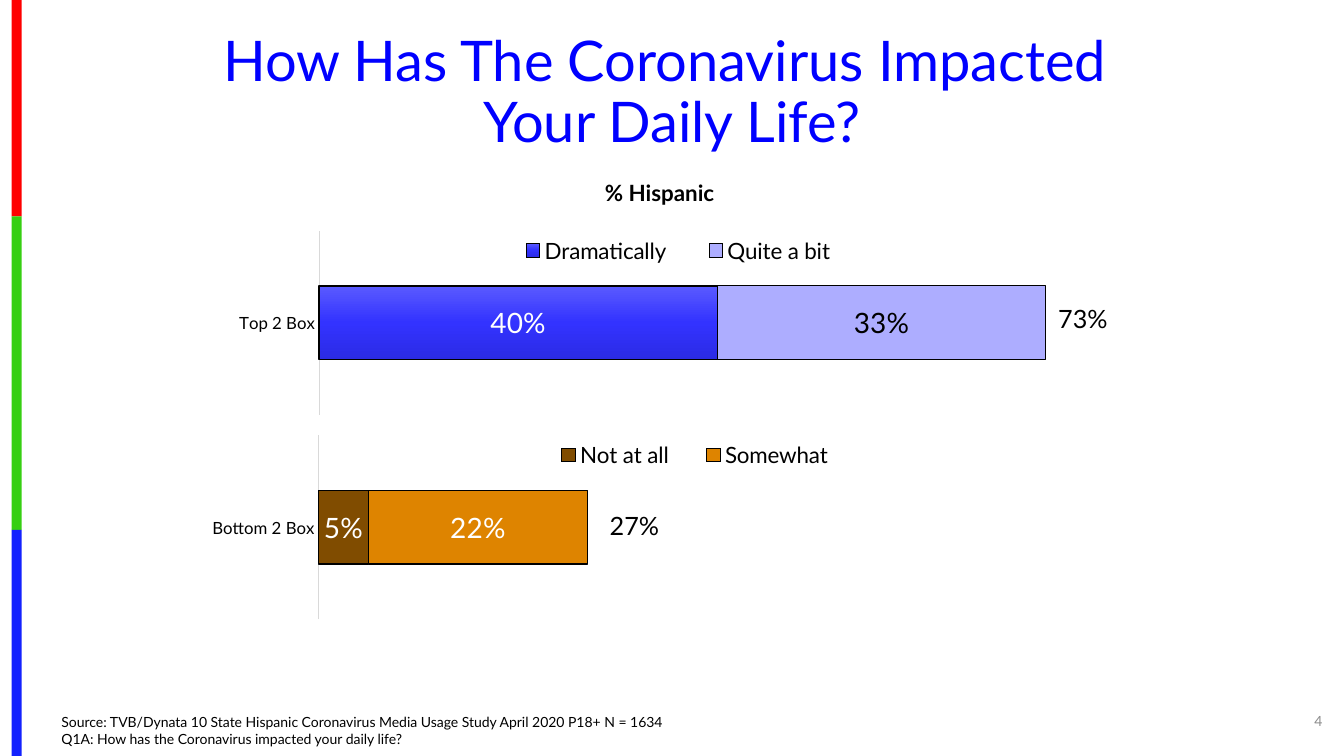
from pptx import Presentation
from pptx import util as u
from pptx.chart.data import CategoryChartData
from pptx.dml.color import RGBColor
from pptx.enum import chart as ch, shapes, text
from pptx.oxml import parse_xml
from pptx.oxml.ns import nsdecls, qn

FONT = "Lato"
BLACK = RGBColor(0, 0, 0)
WHITE = RGBColor(255, 255, 255)
BLUE = RGBColor(0, 0, 255)
PAGE_GREY = RGBColor(0x8C, 0x8C, 0x8C)
AXIS_GREY = RGBColor(0xD9, 0xD9, 0xD9)
VIVID_BLUE = RGBColor(0x33, 0x33, 0xFF)
PALE_BLUE = RGBColor(0xAD, 0xAD, 0xFF)
BROWN = RGBColor(0x80, 0x4C, 0x00)
ORANGE = RGBColor(0xDE, 0x84, 0x00)
RED = RGBColor(0xFE, 0, 0)
GREEN = RGBColor(0x36, 0xCF, 0x12)
STRIPE_BLUE = RGBColor(0x13, 0x22, 0xFE)

SLIDE_SIZE = (960, 540)
TITLE = ["How Has The Coronavirus Impacted ", "Your Daily Life?"]
SOURCE = [
    "Source: TVB/Dynata 10 State Hispanic Coronavirus Media Usage Study April 2020 P18+ N = 1634 ",
    "Q1A: How has the Coronavirus impacted your daily life?",
]
TITLE_BOX = (30, 20, 900, 94.3)
SOURCE_BOX = (36.7, 517.7, 772.6, 19.4)
STRIPE_LEFT, STRIPE_WIDTH = 8.3, 7.2
STRIPES = [(154.6, RED), (223.9, GREEN), (161.5, STRIPE_BLUE)]

# Gradient stops: position in percent, colour
DRAMATIC_STOPS = [(0, "5A5AFF"), (50, "3333FF"), (100, "2B2BE5")]
# Series: name, value, fill, label colour, outline width, gradient stops
CHARTS = [
    dict(category="Top 2 Box", box=(28, 146.2, 787, 155.5), reverse=False,
         plot=(0.254, 0.12, 0.723, 0.845), legend=(0.41, 0.14, 0.34, 0.14),
         series=[("Dramatically", 0.4, VIVID_BLUE, WHITE, 1, DRAMATIC_STOPS),
                 ("Quite a bit", 0.33, PALE_BLUE, BLACK, 0.75, None)]),
    dict(category="Bottom 2 Box", box=(36.7, 292.3, 779, 155.5), reverse=True,
         plot=(0.245, 0.12, 0.731, 0.845), legend=(0.44, 0.14, 0.3, 0.14),
         series=[("Not at all", 0.05, BROWN, WHITE, 0.75, None),
                 ("Somewhat", 0.22, ORANGE, WHITE, 0.75, None)]),
]
LEFT, CENTER, RIGHT = text.PP_ALIGN.LEFT, text.PP_ALIGN.CENTER, text.PP_ALIGN.RIGHT
TOP, MIDDLE, BOTTOM = text.MSO_ANCHOR.TOP, text.MSO_ANCHOR.MIDDLE, text.MSO_ANCHOR.BOTTOM
# Words, box, size, colour, bold, alignment, anchor
LABELS = [
    ("73%", (748.8, 213.1, 86.4, 29), 18, BLACK, False, LEFT, TOP),
    ("27%", (428.4, 360.7, 86.4, 29), 18, BLACK, False, LEFT, TOP),
    ("4", (908.6, 500.4, 43.2, 28.8), 10, PAGE_GREY, False, RIGHT, MIDDLE),
    ("% Hispanic", (342.7, 124.6, 257, 26.6), 16, BLACK, True, CENTER, TOP),
]


def points(values):
    return [u.Pt(v) for v in values]


def style(font, size, color, bold=False):
    font.name, font.size, font.bold = FONT, u.Pt(size), bold
    font.color.rgb = color


def write(shape, lines, size, color, bold=False, align=LEFT, anchor=TOP, spacing=1.0):
    """Fill a shape with one paragraph, its lines parted by line breaks."""
    frame = shape.text_frame
    frame.word_wrap = True
    frame.auto_size = text.MSO_AUTO_SIZE.NONE
    frame.vertical_anchor = anchor
    paragraph = frame.paragraphs[0]
    paragraph.alignment = align
    paragraph.line_spacing = spacing
    paragraph.space_before = u.Pt(0)
    for number, line in enumerate(lines):
        if number:
            paragraph.add_line_break()
        run = paragraph.add_run()
        run.text = line
        style(run.font, size, color, bold)
    return paragraph


def place(shape, box):
    shape.left, shape.top, shape.width, shape.height = points(box)


def manual_layout(box, inner=False):
    target = '<c:layoutTarget val="inner"/>' if inner else ""
    modes = '<c:xMode val="edge"/><c:yMode val="edge"/>'
    sizes = "".join(f'<c:{tag} val="{v}"/>' for tag, v in zip("xywh", box))
    return parse_xml(f'<c:layout {nsdecls("c")}><c:manualLayout>{target}{modes}{sizes}'
                     "</c:manualLayout></c:layout>")


def vertical_gradient(stops):
    marks = "".join(f'<a:gs pos="{pos * 1000}"><a:srgbClr val="{color}"/></a:gs>'
                    for pos, color in stops)
    return parse_xml(f'<a:gradFill {nsdecls("a")} rotWithShape="1"><a:gsLst>{marks}</a:gsLst>'
                     '<a:lin ang="5400000" scaled="0"/></a:gradFill>')


def add_stacked_bar(slide, info):
    data = CategoryChartData(number_format="0%")
    data.categories = [info["category"]]
    for name, value, *_ in info["series"]:
        data.add_series(name, [value])
    chart = slide.shapes.add_chart(ch.XL_CHART_TYPE.BAR_STACKED, *points(info["box"]), data).chart
    style(chart.font, 10, BLACK)
    chart.has_title = False

    chart.has_legend = True
    legend = chart.legend
    legend.position = ch.XL_LEGEND_POSITION.BOTTOM
    legend.include_in_layout = True
    style(legend.font, 16, BLACK)
    legend._element.find(qn("c:legendPos")).addnext(manual_layout(info["legend"]))

    plot_area = chart._chartSpace.chart.plotArea
    for old in plot_area.findall(qn("c:layout")):
        plot_area.remove(old)
    plot_area.insert(0, manual_layout(info["plot"], inner=True))

    categories, values = chart.category_axis, chart.value_axis
    categories.major_tick_mark = categories.minor_tick_mark = ch.XL_TICK_MARK.NONE
    categories.reverse_order = info["reverse"]
    style(categories.tick_labels.font, 12, BLACK)
    categories.format.line.color.rgb = AXIS_GREY
    categories.format.line.width = u.Pt(0.75)
    values.minimum_scale, values.maximum_scale = 0, 0.8
    values.has_major_gridlines = False
    values.visible = False

    plot = chart.plots[0]
    plot.gap_width, plot.overlap, plot.vary_by_categories = 150, 100, False
    for series, (_, _, color, label_color, width, stops) in zip(plot.series, info["series"]):
        series.format.fill.solid()
        series.format.fill.fore_color.rgb = color
        series.format.line.color.rgb = BLACK
        series.format.line.width = u.Pt(width)
        if stops:
            solid = series._element.spPr.find(qn("a:solidFill"))
            solid.getparent().replace(solid, vertical_gradient(stops))
        labels = series.data_labels
        labels.show_value = True
        labels.number_format, labels.number_format_is_linked = "0%", False
        labels.position = ch.XL_LABEL_POSITION.CENTER
        style(labels.font, 20, label_color)


def main():
    deck = Presentation()
    deck.slide_width, deck.slide_height = points(SLIDE_SIZE)
    slide = deck.slides.add_slide(deck.slide_layouts[1])

    stripe_top = 0
    for height, color in STRIPES:
        stripe = slide.shapes.add_shape(
            shapes.MSO_SHAPE.RECTANGLE, *points((STRIPE_LEFT, stripe_top, STRIPE_WIDTH, height)))
        stripe.shadow.inherit = False
        stripe.fill.solid()
        stripe.fill.fore_color.rgb = color
        stripe.line.fill.background()
        stripe_top += height

    title, source = slide.shapes.title, slide.placeholders[1]
    place(title, TITLE_BOX)
    write(title, TITLE, 40, BLUE, align=CENTER, anchor=MIDDLE, spacing=0.9)

    for info in CHARTS:
        add_stacked_bar(slide, info)
    for words, box, *look in LABELS:
        write(slide.shapes.add_textbox(*points(box)), [words], *look)

    place(source, SOURCE_BOX)
    properties = write(source, SOURCE, 10, BLACK, anchor=BOTTOM)._p.get_or_add_pPr()
    properties.set("marL", "0")
    properties.set("indent", "0")
    properties.append(parse_xml(f'<a:buNone {nsdecls("a")}/>'))

    deck.save("out.pptx")


if __name__ == "__main__":
    main()
